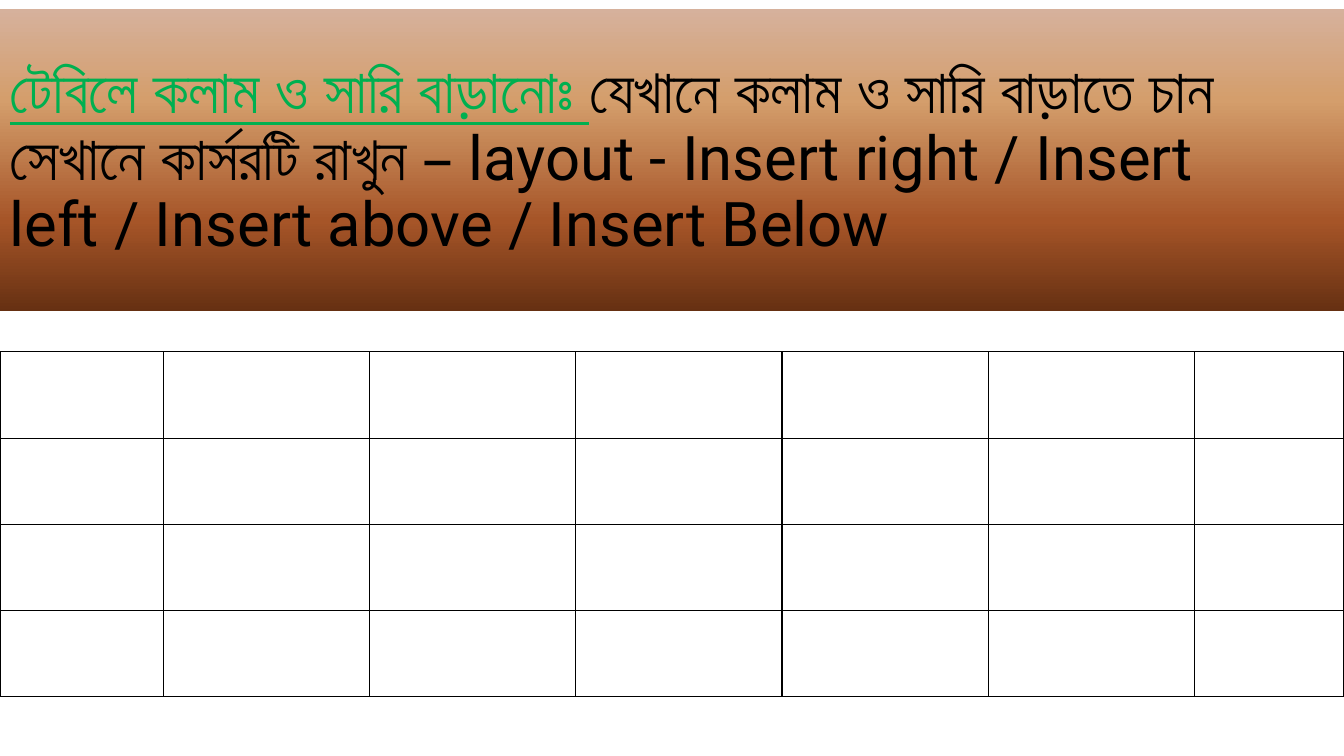
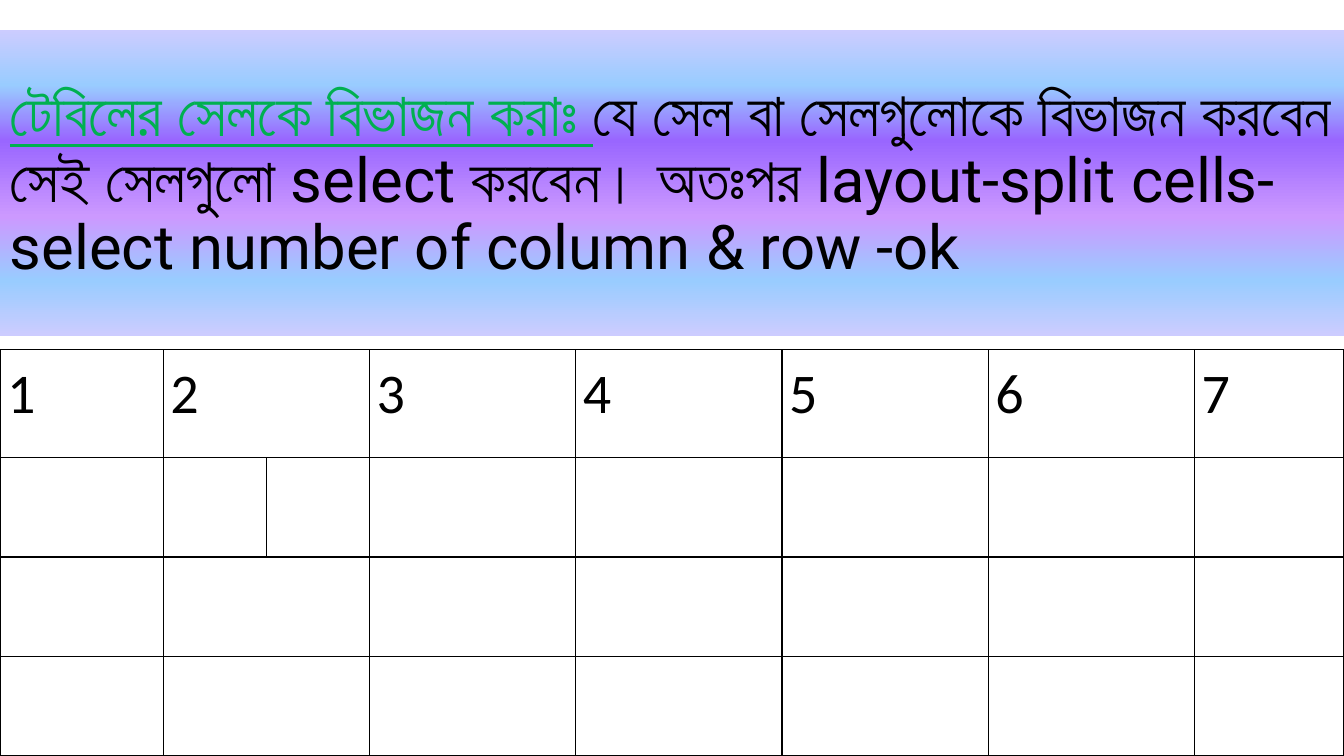
from lxml import etree
from pptx import Presentation
from pptx.dml.color import RGBColor
from pptx.enum.text import MSO_ANCHOR
from pptx.oxml.ns import qn
from pptx.util import Inches, Pt

MIDDLE = MSO_ANCHOR.MIDDLE

# Content: lengths in inches, gradient stops as (percent, colour)
SLIDES = [
    {
        "heading": "টেবিলে কলাম ও সারি বাড়ানোঃ ",
        "body": "যেখানে কলাম ও সারি বাড়াতে চান সেখানে কার্সরটি রাখুন – layout - "
                "Insert right / Insert left / Insert above / Insert Below",
        "band": {"top": 0.09, "height": 3,
                 "stops": [(0, "D6B19C"), (30, "D49E6C"), (70, "A65528"), (100, "663012")]},
        "table": {"top": 3.49, "height": 3.42, "first_row": 0.86,
                  "labels": [], "split_row": None},
    },
    {
        "heading": "টেবিলের সেলকে বিভাজন করাঃ ",
        "body": "যে সেল বা সেলগুলোকে বিভাজন করবেন সেই সেলগুলো select করবেন। "
                "অতঃপর layout-split cells- select number of column & row -ok",
        "band": {"top": 0.3, "height": 3.03,
                 "stops": [(0, "CCCCFF"), (18, "99CCFF"), (36, "9966FF"),
                           (61, "CC99FF"), (82, "99CCFF"), (100, "CCCCFF")]},
        "table": {"top": 3.47, "height": 4.03, "first_row": 1.07,
                  "labels": ["1", "2", "3", "4", "5", "6", "7"], "split_row": 1},
    },
]

THEME = {
    "width": 13.33, "height": 7.5, "border": "000000", "border_width": 1,
    "heading": {"name": "Roboto", "size": Pt(44), "underline": True, "color": "00B050"},
    "body": {"name": "Roboto", "size": Pt(44), "underline": False, "color": "000000"},
    "cell": {"name": "Calibri", "size": Pt(40), "bold": False, "color": "000000"},
}
ROWS, COLUMNS = 4, 7
FIRST_COLUMN, LAST_COLUMN = 1.62, 1.48
SPLIT_COLUMN = 1
CELL_FORMAT = {"margin_left": Inches(0.07), "margin_right": Inches(0.07),
               "margin_top": 0, "margin_bottom": 0}


def add_run(paragraph, text, style):
    run = paragraph.add_run()
    run.text = text
    for name, value in style.items():
        if name == "color":
            run.font.color.rgb = RGBColor.from_string(value)
        else:
            setattr(run.font, name, value)


def add_solid_color(parent, color):
    fill = etree.SubElement(parent, qn("a:solidFill"))
    etree.SubElement(fill, qn("a:srgbClr"), val=color)


def set_gradient(shape, stops):
    """Fill the shape from top to bottom with any number of stops."""
    shape.fill.gradient()
    gradient = shape.fill._xPr.find(qn("a:gradFill"))
    for child in list(gradient):
        gradient.remove(child)
    stop_list = etree.SubElement(gradient, qn("a:gsLst"))
    for percent, color in stops:
        stop = etree.SubElement(stop_list, qn("a:gs"), pos=str(percent * 1000))
        etree.SubElement(stop, qn("a:srgbClr"), val=color)
    etree.SubElement(gradient, qn("a:lin"), ang="5400000", scaled="0")


def add_title_band(slide, content):
    band = content["band"]
    shape = slide.shapes.add_textbox(0, Inches(band["top"]), Inches(THEME["width"]),
                                     Inches(band["height"]))
    set_gradient(shape, band["stops"])
    frame = shape.text_frame
    frame.word_wrap = True
    frame.vertical_anchor = MIDDLE
    paragraph = frame.paragraphs[0]
    paragraph.line_spacing = 0.9
    for part in ("heading", "body"):
        add_run(paragraph, content[part], THEME[part])


def style_cell(cell):
    # Borders come before the fill in the cell properties
    properties = cell._tc.get_or_add_tcPr()
    for side in ("a:lnL", "a:lnR", "a:lnT", "a:lnB"):
        line = etree.SubElement(properties, qn(side), w=str(Pt(THEME["border_width"])))
        add_solid_color(line, THEME["border"])
    cell.fill.background()


def add_grid(slide, content):
    # Equal inner columns; a split column becomes two halves
    inner = (THEME["width"] - FIRST_COLUMN - LAST_COLUMN) / (COLUMNS - 2)
    widths = [FIRST_COLUMN] + [inner] * (COLUMNS - 2) + [LAST_COLUMN]
    split_row = content["split_row"]
    is_split = split_row is not None
    if is_split:
        widths[SPLIT_COLUMN:SPLIT_COLUMN + 1] = [inner / 2] * 2
    other_row = (content["height"] - content["first_row"]) / (ROWS - 1)
    heights = [content["first_row"]] + [other_row] * (ROWS - 1)

    table = slide.shapes.add_table(ROWS, len(widths), 0, Inches(content["top"]),
                                   Inches(THEME["width"]), Inches(content["height"])).table
    table.first_row = table.horz_banding = False
    for column, width in zip(table.columns, widths):
        column.width = Inches(width)
    for row, height in zip(table.rows, heights):
        row.height = Inches(height)
    for cell in table.iter_cells():
        style_cell(cell)
    if is_split:
        for row in range(ROWS):
            if row != split_row:
                table.cell(row, SPLIT_COLUMN).merge(table.cell(row, SPLIT_COLUMN + 1))

    # Labels in the first row, one per visible cell
    label_cells = [cell for cell in table.rows[0].cells if not cell.is_spanned]
    for cell, label in zip(label_cells, content["labels"]):
        for name, value in CELL_FORMAT.items():
            setattr(cell, name, value)
        paragraph = cell.text_frame.paragraphs[0]
        paragraph.line_spacing = 1.15
        add_run(paragraph, label, THEME["cell"])


def main():
    presentation = Presentation()
    presentation.slide_width = Inches(THEME["width"])
    presentation.slide_height = Inches(THEME["height"])
    blank_layout = presentation.slide_layouts[6]
    for content in SLIDES:
        slide = presentation.slides.add_slide(blank_layout)
        add_title_band(slide, content)
        add_grid(slide, content["table"])
    presentation.save("out.pptx")


if __name__ == "__main__":
    main()
